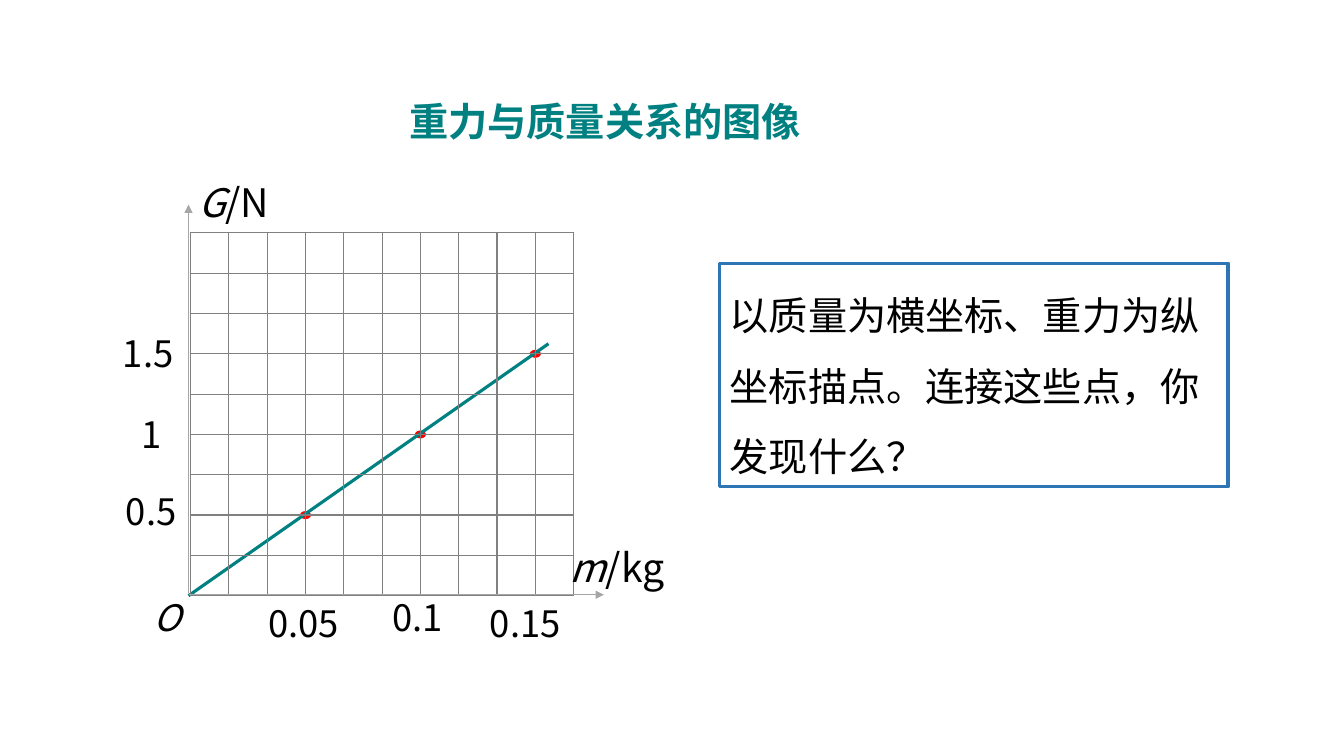
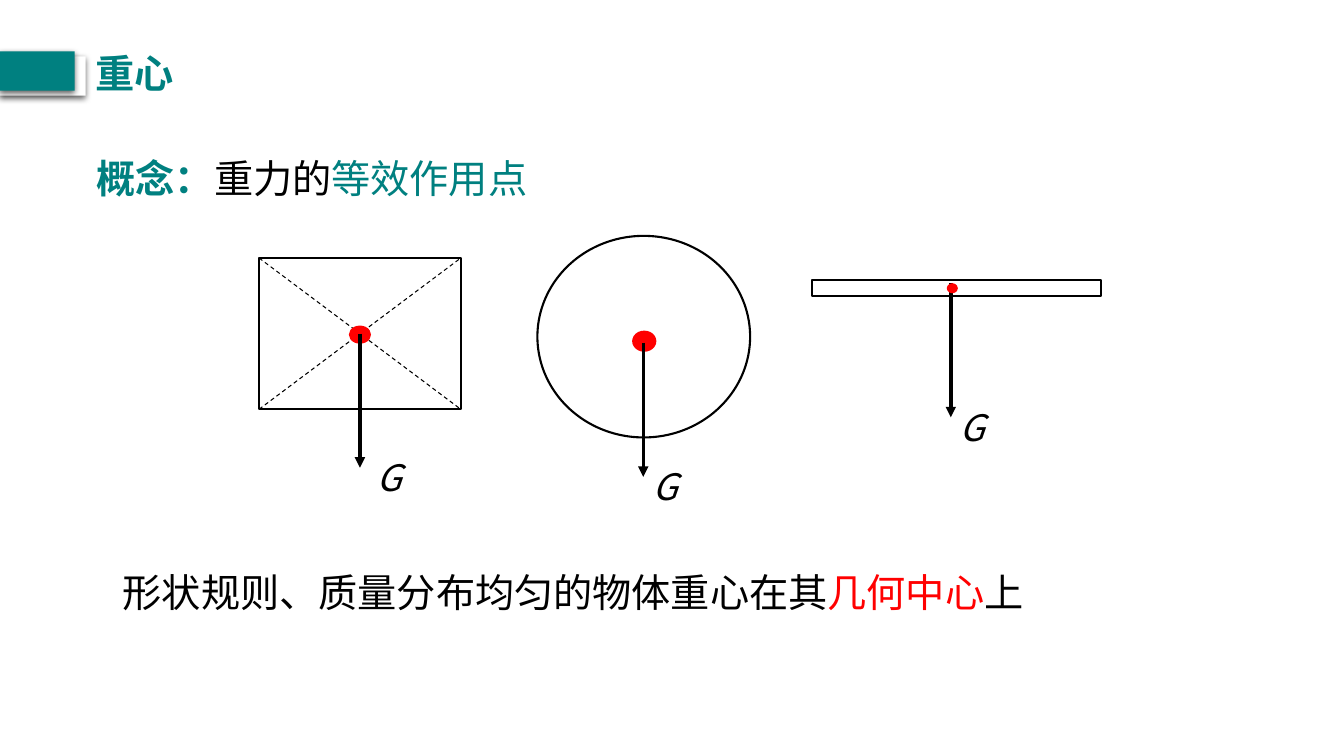
import dataclasses

import lxml.etree
import pptx
import pptx.dml.color
import pptx.enum.dml
import pptx.enum.shapes
import pptx.enum.text
import pptx.oxml
import pptx.oxml.ns
import pptx.util

Inches = pptx.util.Inches
Pt = pptx.util.Pt
RGBColor = pptx.dml.color.RGBColor
Shape = pptx.enum.shapes.MSO_SHAPE
qn = pptx.oxml.ns.qn


@dataclasses.dataclass(frozen=True)
class Theme:
    font: str = "Noto Sans CJK SC"
    teal: str = "008080"
    red: str = "FF0000"
    black: str = "000000"
    white: str = "FFFFFF"
    blue: str = "2E75B6"
    grid: str = "808080"
    axis: str = "A6A6A6"
    body_size: int = 28
    label_size: int = 26


theme = Theme()


def add_shape(page, kind, box, fill=None, line=None, weight=1.5):
    shape = page.shapes.add_shape(kind, *map(Inches, box))
    shape.shadow.inherit = False
    if fill:
        shape.fill.solid()
        shape.fill.fore_color.rgb = RGBColor.from_string(fill)
    else:
        shape.fill.background()
    if line:
        shape.line.color.rgb = RGBColor.from_string(line)
        shape.line.width = Pt(weight)
    else:
        shape.line.fill.background()
    return shape


def add_line(page, start, end, color, weight, dashed=False, arrow=False):
    line = page.shapes.add_connector(
        pptx.enum.shapes.MSO_CONNECTOR.STRAIGHT, *map(Inches, start + end))
    line.line.color.rgb = RGBColor.from_string(color)
    line.line.width = Pt(weight)
    if dashed:
        line.line.dash_style = pptx.enum.dml.MSO_LINE.DASH
    properties = line._element.spPr
    if arrow:
        lxml.etree.SubElement(properties.find(qn("a:ln")), qn("a:tailEnd"), type="triangle")
    lxml.etree.SubElement(properties, qn("a:effectLst"))


deck = pptx.Presentation()
deck.slide_width = Inches(13.33)
deck.slide_height = Inches(7.5)
title_only = deck.slide_layouts[5]
graph_page = deck.slides.add_slide(title_only)
center_page = deck.slides.add_slide(title_only)

# Each text: (shape, spans, size, line spacing); a span is (text, colour, bold, italic).
texts = []
for page, wording, box in [
    (graph_page, "重力与质量关系的图像", (3.96, 0.92, 4.38, 0.57)),
    (center_page, "重心", (0.85, 0.44, 3.74, 0.57)),
]:
    title = page.shapes.title
    title.left, title.top, title.width, title.height = map(Inches, box)
    texts.append((title, [(wording, theme.teal, True, False)], theme.body_size, 1))

# Graph of weight against mass
grid_left, grid_top, column_width, row_height = 1.89, 2.31, 0.38, 0.4
column_count, row_count = 10, 9
grid_bottom = grid_top + row_count * row_height
dot_width, dot_height = 0.11, 0.08
for step in (1, 2, 3):
    dot_x = grid_left + 3 * step * column_width
    dot_y = grid_bottom - 2 * step * row_height
    add_shape(graph_page, Shape.OVAL,
              (dot_x - dot_width / 2, dot_y - dot_height / 2, dot_width, dot_height), theme.red)
add_line(graph_page, (1.87, 5.91), (5.44, 3.41), theme.teal, 2.25)

grid = graph_page.shapes.add_table(
    row_count, column_count, Inches(grid_left), Inches(grid_top),
    Inches(column_count * column_width), Inches(row_count * row_height)).table
grid.first_row = False
grid.horz_banding = False
for column in grid.columns:
    column.width = Inches(column_width)
for row in grid.rows:
    row.height = Inches(row_height)
for cell in grid.iter_cells():
    cell.margin_top = cell.margin_bottom = 0
    cell_properties = cell._tc.get_or_add_tcPr()
    for side in ("a:lnL", "a:lnR", "a:lnT", "a:lnB"):
        border = lxml.etree.SubElement(cell_properties, qn(side), w=str(Pt(1)))
        border_fill = lxml.etree.SubElement(border, qn("a:solidFill"))
        lxml.etree.SubElement(border_fill, qn("a:srgbClr"), val=theme.grid)
    cell.fill.background()

for start, end in [((1.87, 5.9), (5.99, 5.9)), ((1.87, 5.88), (1.87, 2.03))]:
    add_line(graph_page, start, end, theme.axis, 0.5, arrow=True)

for wording, left, top, width in [
    ("0.05", 2.56, 5.91, 1.22),
    ("0.1", 3.79, 5.86, 0.89),
    ("0.15", 4.76, 5.91, 1.08),
    ("0.5", 1.15, 4.8, 0.89),
    ("1", 1.31, 4.04, 0.56),
    ("1.5", 1.12, 3.24, 0.78),
    ("O", 1.42, 5.86, 0.89),
]:
    label = graph_page.shapes.add_textbox(*map(Inches, (left, top, width, 0.54)))
    texts.append((label, [(wording, theme.black, False, wording == "O")], theme.label_size, 1))

for symbol, unit, left, top, width in [
    ("G", "/N", 1.87, 1.72, 1.07),
    ("m", "/kg", 5.55, 5.34, 1.35),
]:
    label = graph_page.shapes.add_textbox(*map(Inches, (left, top, width, 0.57)))
    spans = [(symbol, theme.black, False, True), (unit, theme.black, False, False)]
    texts.append((label, spans, theme.body_size, 1))

question = add_shape(graph_page, Shape.RECTANGLE, (7.14, 2.61, 5.04, 2.22),
                     line=theme.blue, weight=2.25)
texts.append((question,
              [("以质量为横坐标、重力为纵坐标描点。连接这些点，你发现什么？", theme.black, False, False)],
              theme.body_size, 1.5))

# Centre of gravity: heading tab, then three regular bodies
for box, fill in [((0, 0.56, 0.85, 0.39), theme.white), ((0, 0.51, 0.74, 0.39), theme.teal)]:
    tab = add_shape(center_page, Shape.RECTANGLE, box, fill)
    shadow = lxml.etree.SubElement(
        tab._element.spPr.find(qn("a:effectLst")), qn("a:outerShdw"),
        blurRad=str(Pt(4.5)), dist=str(Pt(1.5)), dir="5400000", algn="t", rotWithShape="0")
    shadow_color = lxml.etree.SubElement(shadow, qn("a:srgbClr"), val=theme.black)
    lxml.etree.SubElement(shadow_color, qn("a:alpha"), val="63000")

block_left, block_top, block_right, block_bottom = 2.57, 2.56, 4.57, 4.06
add_line(center_page, (block_left, block_bottom), (block_right, block_top),
         theme.black, 0.75, dashed=True)
add_line(center_page, (block_left, block_top), (block_right, block_bottom),
         theme.black, 0.75, dashed=True)
block = (block_left, block_top, block_right - block_left, block_bottom - block_top)

for kind, body, dot, arrow_x, arrow_top, label_left, dot_in_front in [
    (Shape.RECTANGLE, block, (3.46, 3.23, 0.22, 0.18), 3.57, 3.31, 3.64, False),
    (Shape.OVAL, (5.33, 2.34, 2.11, 2), (6.27, 3.28, 0.24, 0.21), 6.38, 3.4, 6.37, False),
    (Shape.RECTANGLE, (8.05, 2.78, 2.87, 0.16), (9.39, 2.81, 0.11, 0.1), 9.43, 2.81, 9.42, True),
]:
    add_shape(center_page, kind, body, line=theme.black)
    if not dot_in_front:
        add_shape(center_page, Shape.OVAL, dot, theme.red)
    add_line(center_page, (arrow_x, arrow_top), (arrow_x, arrow_top + 1.33),
             theme.black, 2.5, arrow=True)
    if dot_in_front:
        add_shape(center_page, Shape.OVAL, dot, theme.red)
    label = center_page.shapes.add_textbox(
        *map(Inches, (label_left, arrow_top + 0.94, 0.67, 0.68)))
    texts.append((label, [("G", theme.black, False, True)], theme.label_size, 1.5))

for box, spans in [
    ((0.86, 1.25, 5.57, 0.7), [
        ("概念：", theme.teal, True, False),
        ("重力的", theme.black, False, False),
        ("等效作用点", theme.teal, False, False),
    ]),
    ((1.12, 5.36, 11.53, 0.72), [
        ("形状规则、质量分布均匀的物体重心在其", theme.black, False, False),
        ("几何中心", theme.red, False, False),
        ("上", theme.black, False, False),
    ]),
]:
    statement = center_page.shapes.add_textbox(*map(Inches, box))
    texts.append((statement, spans, theme.body_size, 1.5))

for shape, spans, size, line_spacing in texts:
    frame = shape.text_frame
    frame.word_wrap = True
    frame.auto_size = pptx.enum.text.MSO_AUTO_SIZE.NONE
    frame.vertical_anchor = pptx.enum.text.MSO_ANCHOR.TOP
    para = frame.paragraphs[0]
    para.alignment = pptx.enum.text.PP_ALIGN.LEFT
    para.line_spacing = float(line_spacing)
    para.font.name = theme.font
    para.font.size = Pt(size)
    defaults = para._p.pPr.find(qn("a:defRPr"))
    lxml.etree.SubElement(defaults, qn("a:ea"), typeface=theme.font)
    # Formats that every span shares go on the paragraph, the others on the runs.
    colors, bolds, italics = (set(values) for values in list(zip(*spans))[1:])
    for wording, color, bold, italic in spans:
        span = para.add_run()
        span.text = wording
        color_font = para.font if len(colors) == 1 else span.font
        color_font.color.rgb = RGBColor.from_string(color)
        (para.font if len(bolds) == 1 else span.font).bold = bold
        (para.font if len(italics) == 1 else span.font).italic = italic

deck.save("out.pptx")
